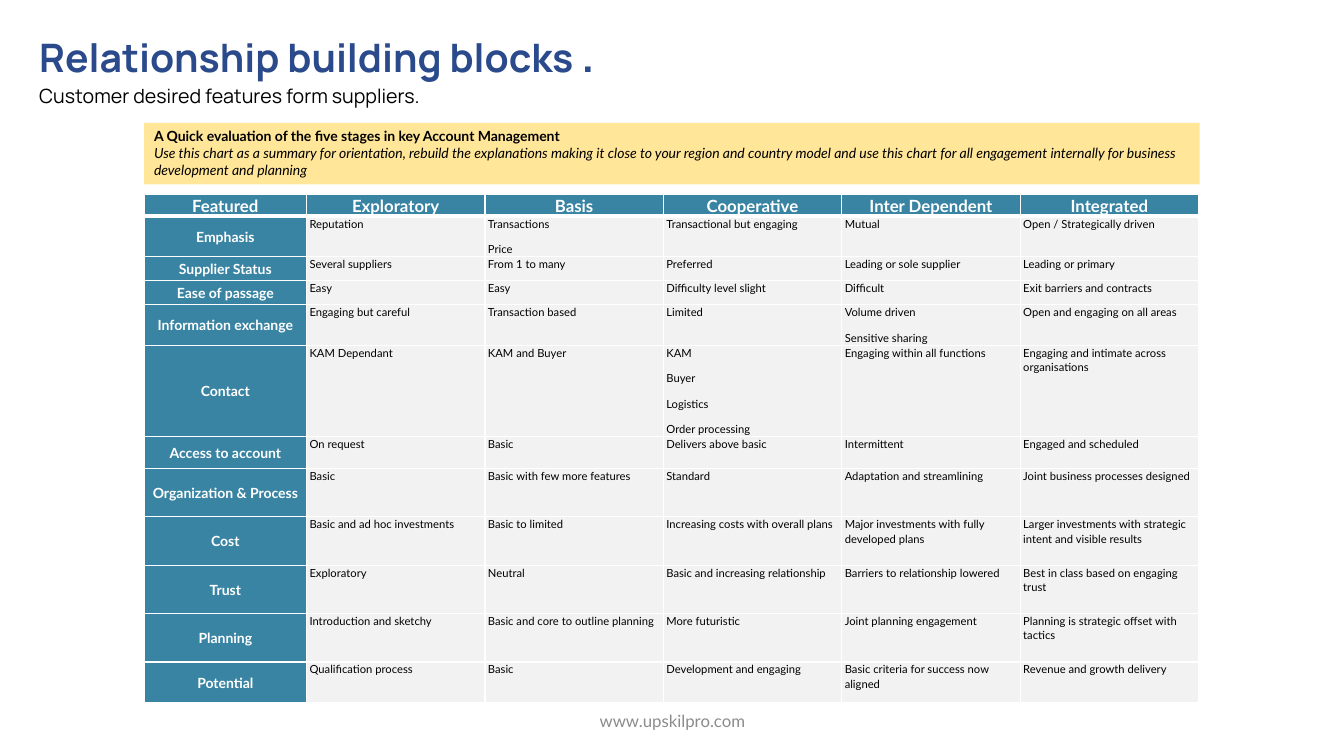
"""Build the relationship building blocks slide with its five-stage table."""
from dataclasses import dataclass
from lxml.etree import SubElement
from pptx import Presentation
from pptx.dml.color import RGBColor
from pptx.enum.shapes import MSO_SHAPE
from pptx.enum.text import MSO_ANCHOR as Anchor, MSO_AUTO_SIZE as AutoSize, PP_ALIGN as Align
from pptx.oxml.ns import qn
from pptx.util import Inches, Pt

TITLE = ("Relationship building blocks ", ".")
SUBTITLE = "Customer desired features form suppliers."
BANNER = (
    "A Quick evaluation of the five stages in key Account Management",
    "Use this chart as a summary for orientation, rebuild the explanations making it close to your "
    "region and country model and use this chart for all engagement internally for business "
    "development and planning",
)
FOOTER = "www.upskilpro.com"
STAGES = ("Featured", "Exploratory", "Basis", "Cooperative", "Inter Dependent", "Integrated")
FEATURES = [
    (0.4, "Emphasis", "Reputation", "Transactions\nPrice", "Transactional but engaging",
     "Mutual", "Open / Strategically driven"),
    (0.24, "Supplier Status", "Several suppliers", "From 1 to many", "Preferred",
     "Leading or sole supplier", "Leading or primary"),
    (0.24, "Ease of passage", "Easy", "Easy", "Difficulty level slight",
     "Difficult", "Exit barriers and contracts"),
    (0.4, "Information exchange", "Engaging but careful", "Transaction based", "Limited",
     "Volume driven\nSensitive sharing", "Open and engaging on all areas"),
    (0.9, "Contact", "KAM Dependant", "KAM and Buyer", "KAM\nBuyer\nLogistics\nOrder processing",
     "Engaging within all functions", "Engaging and intimate across organisations"),
    (0.32, "Access to account", "On request", "Basic", "Delivers above basic",
     "Intermittent", "Engaged and scheduled"),
    (0.48, "Organization & Process", "Basic", "Basic with few more features", "Standard",
     "Adaptation and streamlining", "Joint business processes designed"),
    (0.48, "Cost", "Basic and ad hoc investments", "Basic to limited",
     "Increasing costs with overall plans", "Major investments with fully developed plans",
     "Larger investments with strategic intent and visible results"),
    (0.48, "Trust", "Exploratory", "Neutral", "Basic and increasing relationship",
     "Barriers to relationship lowered", "Best in class based on engaging trust"),
    (0.48, "Planning", "Introduction and sketchy", "Basic and core to outline planning",
     "More futuristic", "Joint planning engagement", "Planning is strategic offset with tactics"),
    (0.4, "Potential", "Qualification process", "Basic", "Development and engaging",
     "Basic criteria for success now aligned", "Revenue and growth delivery"),
]


@dataclass(frozen=True)
class Theme:
    """Fonts, colours and type sizes of the slide."""
    heading: str = "Manrope"
    body: str = "Lato"
    navy: str = "2A4A8B"
    teal: str = "3984A3"
    pale: str = "F2F2F2"
    sand: str = "FFE699"
    grey: str = "8C8C8C"
    black: str = "000000"
    white: str = "FFFFFF"
    title: int = 28
    stop: int = 32
    subtitle: int = 14
    header: int = 12
    label: int = 10
    detail: int = 8


THEME = Theme()
LEFT, WIDTH, TABLE_TOP = 1.43, 10.47, 1.93
HEADER_HEIGHT, LABEL_WIDTH, STAGE_WIDTH = 0.21, 1.61, 1.77


def style(run, size, color, face=THEME.body, bold=False, italic=False):
    font = run.font
    font.name, font.size, font.bold, font.italic = face, Pt(size), bold, italic
    font.color.rgb = RGBColor.from_string(color)


def space(paragraph):
    paragraph.line_spacing, paragraph.space_after = 1.07, Pt(8)


def paint(part, color):
    part.fill.solid()
    part.fill.fore_color.rgb = RGBColor.from_string(color)


def add_text(slide, left, top, width, height):
    frame = slide.shapes.add_textbox(*map(Inches, (left, top, width, height))).text_frame
    frame.word_wrap = True
    return frame


def add_borders(cell, top, bottom):
    properties = cell._tc.get_or_add_tcPr()
    for side, points in (("L", 1), ("R", 1), ("T", top), ("B", bottom)):
        line = SubElement(properties, qn(f"a:ln{side}"), w=str(Pt(points)))
        SubElement(SubElement(line, qn("a:solidFill")), qn("a:srgbClr"), val=THEME.white)


def fill_cell(cell, words, row, column):
    heading = row == 0 or column == 0
    add_borders(cell, 3 if row == 1 else 1, 3 if row == 0 else 1)
    paint(cell, THEME.teal if heading else THEME.pale)
    cell.margin_left = cell.margin_right = Inches(0.03)
    cell.margin_top = cell.margin_bottom = 0
    cell.vertical_anchor = Anchor.MIDDLE if heading else Anchor.TOP
    size = THEME.header if row == 0 else THEME.label if heading else THEME.detail
    cell.text_frame.text = words
    for paragraph in cell.text_frame.paragraphs:
        space(paragraph)
        paragraph.alignment = Align.CENTER if heading else Align.LEFT
        style(paragraph.runs[0], size, THEME.white if heading else THEME.black, bold=heading)


def add_stage_table(slide):
    rows = [(HEADER_HEIGHT, *STAGES), *FEATURES]
    total = sum(row[0] for row in rows)
    table = slide.shapes.add_table(len(rows), len(STAGES), Inches(LEFT), Inches(TABLE_TOP),
                                   Inches(WIDTH), Inches(total)).table
    table.first_row = table.horz_banding = False
    for index, column in enumerate(table.columns):
        column.width = Inches(STAGE_WIDTH if index else LABEL_WIDTH)
    for row, (height, *entries) in enumerate(rows):
        table.rows[row].height = Inches(height)
        for column, words in enumerate(entries):
            fill_cell(table.cell(row, column), words, row, column)


def add_banner(slide):
    banner = slide.shapes.add_shape(MSO_SHAPE.RECTANGLE, Inches(LEFT), Inches(1.22),
                                    Inches(WIDTH), Inches(0.61))
    banner.shadow.inherit = False
    paint(banner, THEME.sand)
    banner.line.fill.background()
    frame = banner.text_frame
    frame.word_wrap, frame.auto_size = True, AutoSize.SHAPE_TO_FIT_TEXT
    frame.vertical_anchor = Anchor.TOP
    frame.text = "\n".join(BANNER)
    for index, paragraph in enumerate(frame.paragraphs):
        paragraph.alignment = Align.LEFT
        style(paragraph.runs[0], THEME.label, THEME.black, bold=index == 0, italic=index == 1)


def add_heading(slide):
    frame = add_text(slide, 0.29, 0.23, 7.01, 0.88)
    frame.auto_size = AutoSize.SHAPE_TO_FIT_TEXT
    frame.text = TITLE[0]
    title = frame.paragraphs[0]
    title.add_run().text = TITLE[1]
    for run, size in zip(title.runs, (THEME.title, THEME.stop)):
        style(run, size, THEME.navy, THEME.heading, bold=True)
    subtitle = frame.add_paragraph()
    subtitle.text = SUBTITLE
    space(subtitle)
    style(subtitle.runs[0], THEME.subtitle, THEME.black, THEME.heading)


def add_footer(slide):
    frame = add_text(slide, 4.42, 6.95, 4.5, 0.4)
    frame.vertical_anchor = Anchor.MIDDLE
    frame.text = FOOTER
    address = frame.paragraphs[0]
    address.alignment = Align.CENTER
    style(address.runs[0], THEME.header, THEME.grey)


def main():
    deck = Presentation()
    deck.slide_width, deck.slide_height = Inches(13.33), Inches(7.5)
    slide = deck.slides.add_slide(deck.slide_layouts[6])
    for add_part in (add_stage_table, add_banner, add_heading, add_footer):
        add_part(slide)
    deck.save("out.pptx")


if __name__ == "__main__":
    main()
